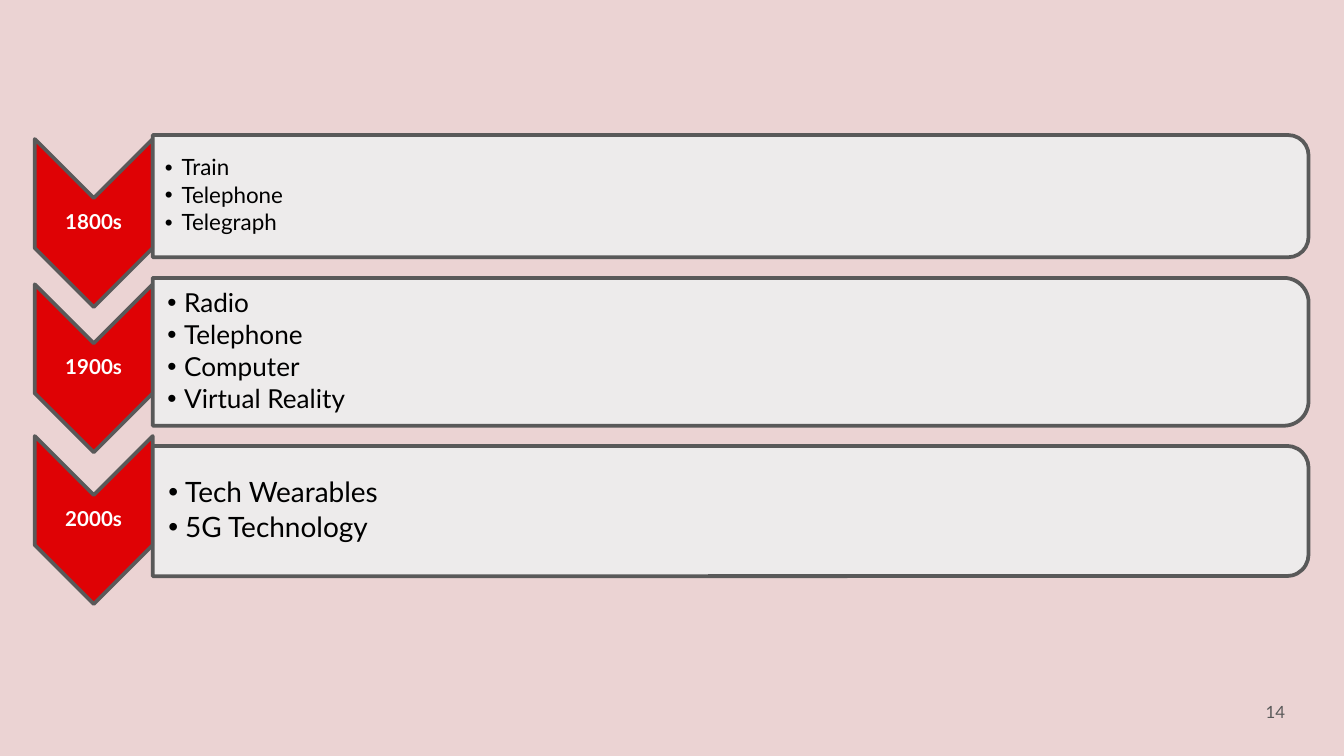
import dataclasses

import lxml.etree
import pptx
import pptx.dml.color
import pptx.enum.shapes
import pptx.enum.text
import pptx.oxml.ns
import pptx.util

Pt = pptx.util.Pt
SHAPES = pptx.enum.shapes.MSO_SHAPE
ALIGN = pptx.enum.text.PP_ALIGN
qn = pptx.oxml.ns.qn


@dataclasses.dataclass(frozen=True)
class Theme:
    font: str = "Lato"
    background: str = "EBD3D3"
    accent: str = "DF0205"
    panel: str = "EEEEEE"
    outline: str = "595959"
    text: str = "000000"
    label: str = "FFFFFF"
    label_size: float = 11
    number_size: float = 9
    line_width: float = 2
    line_spacing: float = 0.9


@dataclasses.dataclass(frozen=True)
class Era:
    name: str
    inventions: tuple
    chevron_middle: float
    panel_middle: float
    panel_height: float
    text_size: float
    text_inset: float


ERAS = (
    Era("1800s", ("Train", "Telephone", "Telegraph"), 119.5, 105.1, 65.5, 12, 6.5),
    Era("1900s", ("Radio", "Telephone", "Computer", "Virtual Reality"),
        197.3, 188.5, 79.2, 14, 7.8),
    Era("2000s", ("Tech Wearables", "5G Technology"), 278.6, 273.8, 69.8, 15, 8.4),
)
CHEVRON_CENTER, CHEVRON_LENGTH, CHEVRON_WIDTH = 50.2, 90, 63.2
LABEL_HEIGHT = 27.4
PANEL_LEFT, PANEL_WIDTH = 81.8, 619.2
LIST_WIDTH = 615.6
BULLET_INDENT = 9


def rgb(code):
    return pptx.dml.color.RGBColor.from_string(code)


class SlideBuilder:
    def __init__(self, slide, theme):
        self.slide = slide
        self.theme = theme
        fill = slide.background.fill
        fill.solid()
        fill.fore_color.rgb = rgb(theme.background)
        slide.shapes.title.element.getparent().remove(slide.shapes.title.element)
        self.free_bodies = list(slide.placeholders)

    def turned_shape(self, kind, center, middle, length, breadth, color, opacity=100):
        """Add a shape turned by 90 degrees; length is its height as seen."""
        shape = self.slide.shapes.add_shape(
            kind, Pt(center - length / 2), Pt(middle - breadth / 2), Pt(length), Pt(breadth))
        shape.rotation = 90
        shape.shadow.inherit = False
        shape.fill.solid()
        shape.fill.fore_color.rgb = rgb(color)
        if opacity < 100:
            color_node = shape.element.spPr.find(qn("a:solidFill"))[0]
            lxml.etree.SubElement(color_node, qn("a:alpha"), val=str(opacity * 1000))
        shape.line.color.rgb = rgb(self.theme.outline)
        shape.line.width = Pt(self.theme.line_width)

    def format_frame(self, frame, left_inset, inset):
        frame.word_wrap = True
        frame.auto_size = pptx.enum.text.MSO_AUTO_SIZE.NONE
        frame.vertical_anchor = pptx.enum.text.MSO_ANCHOR.MIDDLE
        frame.margin_left = Pt(left_inset)
        frame.margin_top = frame.margin_right = frame.margin_bottom = Pt(inset)

    def format_runs(self, para, size, color, bold=False):
        for run in para.runs:
            run.font.name = self.theme.font
            run.font.size = Pt(size)
            run.font.bold = bold
            run.font.color.rgb = rgb(color)

    def text(self, words, left, top, width, height, size, color, align, inset, bold=False):
        box = self.slide.shapes.add_textbox(Pt(left), Pt(top), Pt(width), Pt(height))
        self.format_frame(box.text_frame, inset, inset)
        para = box.text_frame.paragraphs[0]
        para.text = words
        para.alignment = align
        self.format_runs(para, size, color, bold)
        return para

    def bullet_list(self, items, left, top, width, height, size, left_inset):
        body = self.free_bodies.pop(0)
        # Moving the element to the end puts the list in front of its panel.
        body.element.getparent().append(body.element)
        body.left, body.top, body.width, body.height = map(Pt, (left, top, width, height))
        self.format_frame(body.text_frame, left_inset, 0.7)
        body.text_frame.text = "\n".join(items)
        for para in body.text_frame.paragraphs:
            para.level = 1
            para.alignment = ALIGN.LEFT
            para.line_spacing = self.theme.line_spacing
            para.space_before = Pt(0)
            para.space_after = Pt(0.15 * size)
            properties = para._p.get_or_add_pPr()
            properties.set("marL", str(Pt(BULLET_INDENT)))
            properties.set("indent", str(-Pt(BULLET_INDENT)))
            bullet_color = lxml.etree.SubElement(properties, qn("a:buClr"))
            lxml.etree.SubElement(bullet_color, qn("a:srgbClr"), val=self.theme.text)
            lxml.etree.SubElement(properties, qn("a:buFont"), typeface="Arial")
            lxml.etree.SubElement(properties, qn("a:buChar"), char="•")
            self.format_runs(para, size, self.theme.text)

    def era(self, era):
        theme = self.theme
        self.turned_shape(SHAPES.CHEVRON, CHEVRON_CENTER, era.chevron_middle,
                          CHEVRON_LENGTH, CHEVRON_WIDTH, theme.accent)
        label = self.text(era.name, CHEVRON_CENTER - CHEVRON_WIDTH / 2,
                          era.chevron_middle - LABEL_HEIGHT / 2, CHEVRON_WIDTH, LABEL_HEIGHT,
                          theme.label_size, theme.label, ALIGN.CENTER, 0.7, bold=True)
        label.line_spacing = theme.line_spacing
        self.turned_shape(SHAPES.ROUND_2_SAME_RECTANGLE, PANEL_LEFT + PANEL_WIDTH / 2,
                          era.panel_middle, era.panel_height, PANEL_WIDTH, theme.panel, 90)
        list_height = era.panel_height - 6.5
        self.bullet_list(era.inventions, PANEL_LEFT, era.panel_middle - list_height / 2,
                         LIST_WIDTH, list_height, era.text_size, era.text_inset)

    def page_number(self, number):
        self.text(number, 652.3, 365.8, 43.2, 31, self.theme.number_size,
                  self.theme.outline, ALIGN.RIGHT, 7.2)

    def remove_free_bodies(self):
        for body in self.free_bodies:
            body.element.getparent().remove(body.element)


def main():
    deck = pptx.Presentation()
    deck.slide_width, deck.slide_height = Pt(720), Pt(405)
    comparison_layout = deck.slide_layouts[4]
    builder = SlideBuilder(deck.slides.add_slide(comparison_layout), Theme())
    builder.page_number("14")
    for era in ERAS:
        builder.era(era)
    builder.remove_free_bodies()
    deck.save("out.pptx")


if __name__ == "__main__":
    main()
